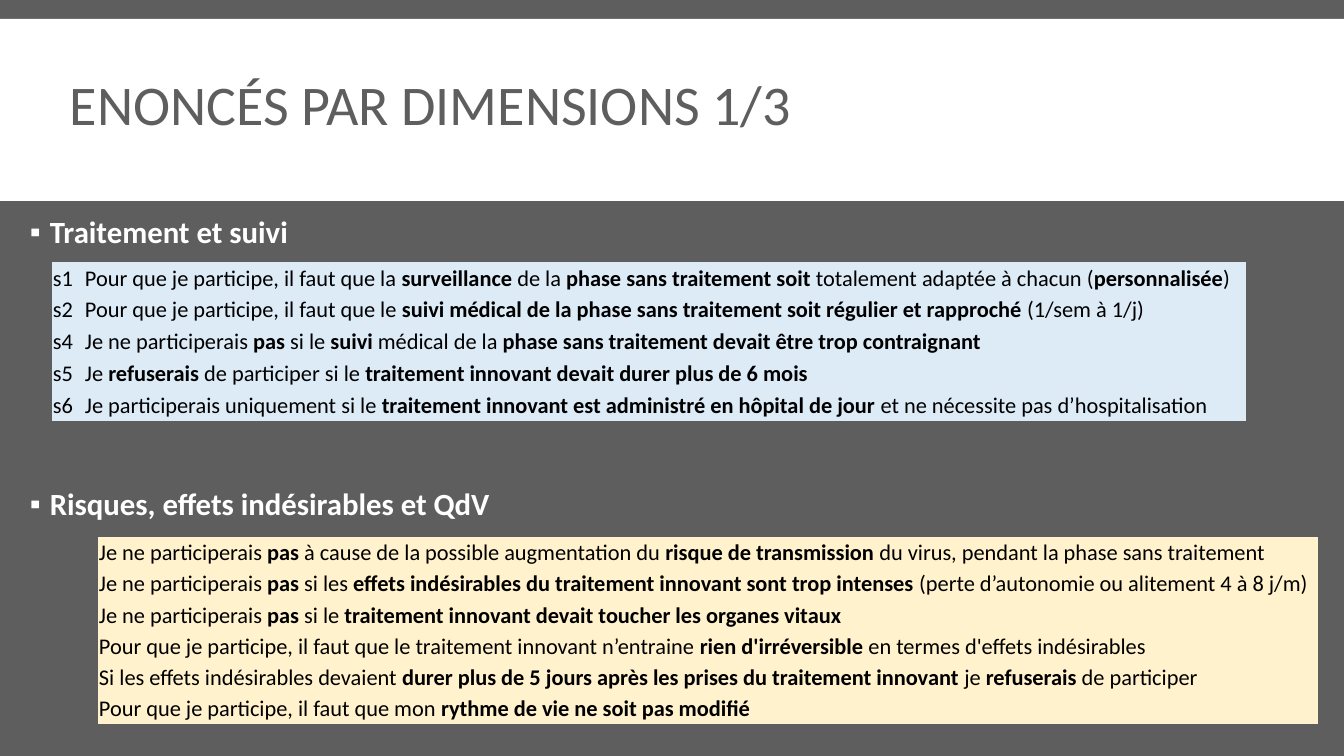
"""Builds the slide of statements grouped by dimension."""
from dataclasses import dataclass

from lxml.etree import SubElement
from pptx import Presentation
from pptx.dml.color import RGBColor
from pptx.enum.shapes import MSO_SHAPE
from pptx.enum.text import MSO_ANCHOR
from pptx.oxml.ns import qn
from pptx.util import Emu, Pt


@dataclass(frozen=True)
class Theme:
    """Holds the colours, font and type sizes."""
    font: str = "Calibri"
    grey: str = "5E5E5E"
    white: str = "FFFFFF"
    black: str = "000000"
    blue: str = "DDEBF7"
    yellow: str = "FFF2CC"
    title: int = 40
    heading: int = 22
    body: int = 16


THEME = Theme()
NO_GRID = "{2D5ABB26-0587-4C30-8999-92F81FD0307C}"

FOLLOW_UP = [
    ("s1", "Pour que je participe, il faut que la *surveillance *de la *phase sans traitement soit "
           "*totalement adaptée à chacun (*personnalisée*)"),
    ("s2", "Pour que je participe, il faut que le *suivi médical de la phase sans traitement soit "
           "régulier et rapproché *(1/sem à 1/j)"),
    ("s4", "Je ne participerais* pas *si le *suivi *médical de la *phase sans traitement devait "
           "être trop contraignant"),
    ("s5", "Je *refuserais* de participer si le *traitement innovant devait durer plus de 6 mois"),
    ("s6", "Je participerais uniquement si le *traitement innovant est administré en hôpital de "
           "jour* et ne nécessite pas d’hospitalisation"),
]
RISKS = [
    ("Je ne participerais *pas* à cause de la possible augmentation du *risque de transmission "
     "*du virus, pendant la phase sans traitement",),
    ("Je ne participerais *pas* si les *effets indésirables du traitement innovant sont trop "
     "intenses *(perte d’autonomie ou alitement 4 à 8 j/m)",),
    ("Je ne participerais *pas* si le *traitement innovant devait toucher les organes vitaux",),
    ("Pour que je participe, il faut que le traitement innovant n’entraine *rien d'irréversible "
     "*en termes d'effets indésirables",),
    ("Si les effets indésirables devaient *durer plus de 5 jours après les prises du traitement "
     "innovant *je *refuserais* de participer",),
    ("Pour que je participe, il faut que mon *rythme de vie ne soit pas modifié",),
]


def px(n):
    """Turns pixels into EMU."""
    return Emu(round(n * 12192000 / 1344))


def rgb(color):
    """Turns a hex string into a colour."""
    return RGBColor.from_string(color)


def set_all(obj, **values):
    """Sets each named attribute of an object."""
    for name, value in values.items():
        setattr(obj, name, value)


def paint(obj, color):
    """Gives a shape, cell or background a solid fill."""
    obj.fill.solid()
    obj.fill.fore_color.rgb = rgb(color)


def write(p, text, size, color, bold=False):
    """Writes text in which each asterisk switches bold."""
    for i, part in enumerate(text.split("*")):
        r = p.add_run()
        r.text = part
        set_all(r.font, name=THEME.font, size=Pt(size), bold=bold or i % 2 == 1)
        r.font.color.rgb = rgb(color)


def add_text(s, box, text, size, color, bold=False, spacing=0.9):
    """Places a one-line text box and returns its paragraph."""
    tf = s.shapes.add_textbox(*map(px, box)).text_frame
    set_all(tf, word_wrap=True, vertical_anchor=MSO_ANCHOR.MIDDLE,
            margin_top=px(5), margin_bottom=px(5))
    p = tf.paragraphs[0]
    p.line_spacing = spacing
    write(p, text, size, color, bold)
    return p


def add_title(s, box, text):
    """Draws the white band with the title inside."""
    x, y, w, h = box
    sp = s.shapes.add_shape(MSO_SHAPE.RECTANGLE, *map(px, box))
    sp.shadow.inherit = False
    paint(sp, THEME.white)
    sp.line.fill.background()
    add_text(s, (x + 60, y + 51, w - 373, 76), text, THEME.title, THEME.grey, spacing=0.85)


def add_heading(s, box, text):
    """Writes a bold heading behind a square bullet."""
    p = add_text(s, box, text, THEME.heading, THEME.white, bold=True)
    pPr = p._p.get_or_add_pPr()
    pPr.set("marL", str(px(20)))
    pPr.set("indent", str(px(-20)))
    SubElement(pPr, qn("a:buFont"), typeface="Arial")
    SubElement(pPr, qn("a:buChar"), char="▪")


def add_statements(s, box, rows, widths, color):
    """Draws a plain table of statements in equal rows."""
    table = s.shapes.add_table(len(rows), len(widths), *map(px, box)).table
    set_all(table, first_row=False, horz_banding=False)
    table._tbl.tblPr.find(qn("a:tableStyleId")).text = NO_GRID
    for col, width in zip(table.columns, widths):
        col.width = px(width)
    for row, texts in zip(table.rows, rows):
        row.height = px(box[3] / len(rows))
        for cell, text in zip(row.cells, texts):
            set_all(cell, margin_left=px(1), margin_right=px(1), margin_top=px(1),
                    margin_bottom=0, vertical_anchor=MSO_ANCHOR.MIDDLE)
            paint(cell, color)
            write(cell.text_frame.paragraphs[0], text, THEME.body, THEME.black)


def add_section(s, box, heading, rows, widths, color, indent, drop):
    """Places a heading with its table of statements below."""
    x, y, w, h = box
    add_heading(s, (x, y, w, 44), heading)
    add_statements(s, (x + indent, y + drop, sum(widths), h - drop), rows, widths, color)


def main():
    """Builds and saves the slide."""
    prs = Presentation()
    set_all(prs, slide_width=px(1344), slide_height=px(756))
    s = prs.slides.add_slide(prs.slide_layouts[6])
    paint(s.background, THEME.grey)
    add_title(s, (0, 19, 1344, 182), "ENONCÉS PAR DIMENSIONS 1/3")
    add_section(s, (20, 212, 1173, 209), "Traitement et suivi",
                FOLLOW_UP, (32, 1162), THEME.blue, indent=32, drop=50)
    add_section(s, (20, 484, 1173, 240), "Risques, effets indésirables et QdV",
                RISKS, (1220,), THEME.yellow, indent=78, drop=53)
    prs.save("out.pptx")


if __name__ == "__main__":
    main()
